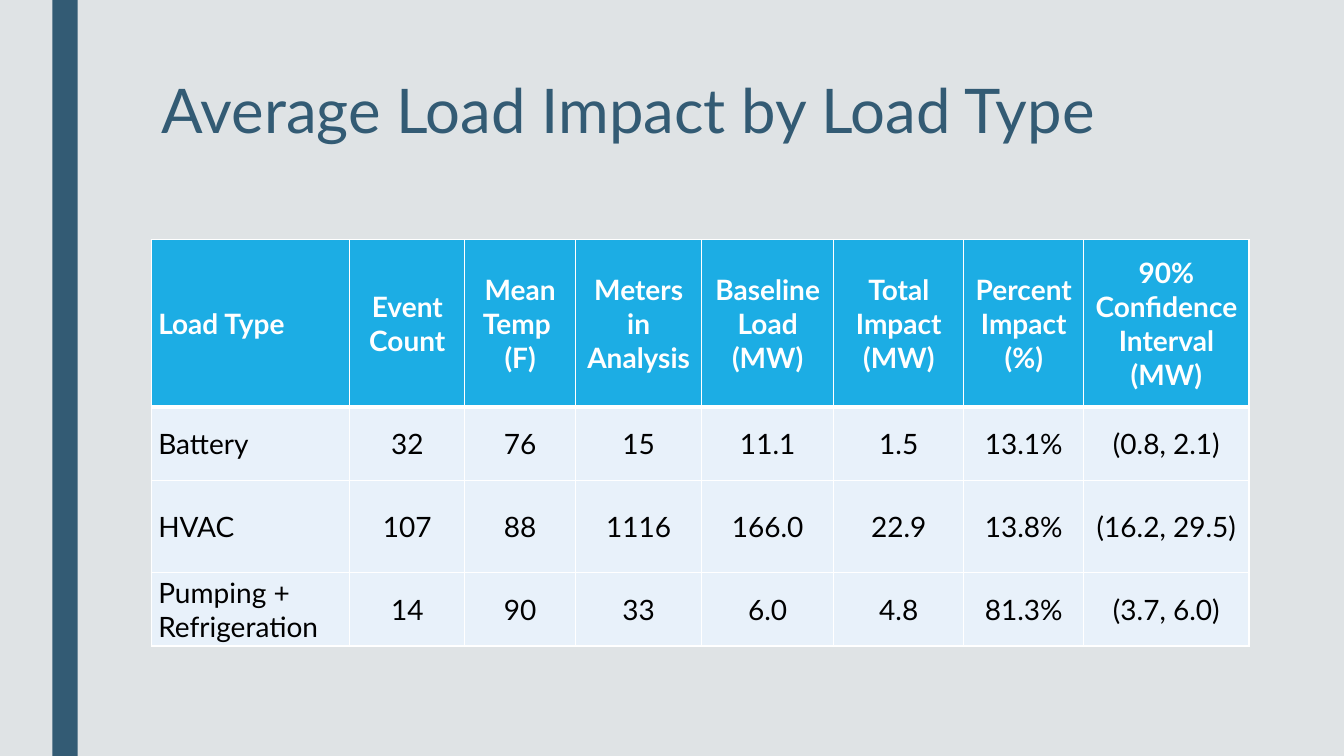
"""Build the slide that tabulates average load impact by load type."""
import dataclasses

import lxml.etree
import pptx
import pptx.dml.color
import pptx.enum.shapes
import pptx.enum.text
import pptx.oxml.ns
import pptx.util

Inches = pptx.util.Inches
Pt = pptx.util.Pt
ALIGN = pptx.enum.text.PP_ALIGN
ANCHOR = pptx.enum.text.MSO_ANCHOR


@dataclasses.dataclass(frozen=True)
class Theme:
    """Colours, font and sizes of the slide."""
    font: str = "Lato"
    background: str = "DFE3E5"
    accent: str = "335B74"
    header_fill: str = "1CADE4"
    body_fill: str = "E8F1FA"
    header_text: str = "FFFFFF"
    body_text: str = "000000"
    border: str = "FFFFFF"
    title_size: int = 44
    table_size: int = 20
    thin: int = 1
    thick: int = 3


COLUMN_WIDTHS = [1.97, 1.14, 1.1, 1.25, 1.31, 1.29, 1.19, 1.64]
ROW_HEIGHTS = [1.66, 0.73, 0.91, 0.73]
ROWS = [
    ["Load Type", "Event Count", "Mean Temp \n(F)", "Meters in Analysis", "Baseline Load (MW)",
     "Total Impact (MW)", "Percent Impact (%)", "90% Confidence Interval (MW)"],
    ["Battery", "32", "76", "15", "11.1", "1.5", "13.1%", "(0.8, 2.1)"],
    ["HVAC", "107", "88", "1116", "166.0", "22.9", "13.8%", "(16.2, 29.5)"],
    ["Pumping + Refrigeration", "14", "90", "33", "6.0", "4.8", "81.3%", "(3.7, 6.0)"],
]


def rgb(color):
    """Turn a hex string into a colour."""
    return pptx.dml.color.RGBColor.from_string(color)


def write_text(text_frame, text, *, font, size, color, bold=False, align=ALIGN.LEFT, spacing=1.0):
    """Fill a text frame, one paragraph per line of text."""
    text_frame.word_wrap = True
    text_frame.text = text
    for paragraph in text_frame.paragraphs:
        paragraph.alignment = align
        paragraph.line_spacing = spacing
        for run in paragraph.runs:
            run.font.name = font
            run.font.size = Pt(size)
            run.font.bold = bold
            run.font.color.rgb = rgb(color)


def add_border(cell, side, color, width):
    """Draw one side (L, R, T or B) of a cell's border."""
    qn = pptx.oxml.ns.qn
    properties = cell._tc.get_or_add_tcPr()
    line = lxml.etree.SubElement(properties, qn(f"a:ln{side}"), w=str(Pt(width)))
    fill = lxml.etree.SubElement(line, qn("a:solidFill"))
    lxml.etree.SubElement(fill, qn("a:srgbClr"), val=color)


class SlideBuilder:
    """Hold the theme and the current slide, and add elements to it."""

    def __init__(self, presentation, theme):
        """Add a title-only slide with the theme's background."""
        self.theme = theme
        self.slide = presentation.slides.add_slide(presentation.slide_layouts[5])
        self.slide.background.fill.solid()
        self.slide.background.fill.fore_color.rgb = rgb(theme.background)

    def bar(self, left, top, width, height):
        """Add a plain accent rectangle."""
        shape = self.slide.shapes.add_shape(
            pptx.enum.shapes.MSO_SHAPE.RECTANGLE,
            Inches(left), Inches(top), Inches(width), Inches(height))
        shape.shadow.inherit = False
        shape.fill.solid()
        shape.fill.fore_color.rgb = rgb(self.theme.accent)
        shape.line.fill.background()

    def title(self, text, left, top, width, height):
        """Place and format the title placeholder."""
        title = self.slide.shapes.title
        title.left, title.top = Inches(left), Inches(top)
        title.width, title.height = Inches(width), Inches(height)
        title.text_frame.vertical_anchor = ANCHOR.TOP
        write_text(title.text_frame, text, font=self.theme.font, size=self.theme.title_size,
                   color=self.theme.accent, spacing=0.89)

    def table(self, rows, left, top, column_widths, row_heights):
        """Add a table whose first row is the header."""
        table = self.slide.shapes.add_table(
            len(rows), len(column_widths), Inches(left), Inches(top),
            Inches(sum(column_widths)), Inches(sum(row_heights))).table
        table.horz_banding = False
        for column, width in zip(table.columns, column_widths):
            column.width = Inches(width)
        for row, height in zip(table.rows, row_heights):
            row.height = Inches(height)
        for row_index, row in enumerate(rows):
            for column_index, text in enumerate(row):
                self.cell(table.cell(row_index, column_index), text, row_index, column_index)

    def cell(self, cell, text, row_index, column_index):
        """Format one table cell according to its row and column."""
        theme = self.theme
        header = row_index == 0
        cell.margin_left = cell.margin_right = Inches(0.07)
        cell.margin_top = cell.margin_bottom = 0
        cell.vertical_anchor = ANCHOR.MIDDLE
        widths = {"L": theme.thin, "R": theme.thin,
                  "T": theme.thick if row_index == 1 else theme.thin,
                  "B": theme.thick if header else theme.thin}
        for side, width in widths.items():
            add_border(cell, side, theme.border, width)
        cell.fill.solid()
        cell.fill.fore_color.rgb = rgb(theme.header_fill if header else theme.body_fill)
        write_text(cell.text_frame, text, font=theme.font, size=theme.table_size, bold=header,
                   color=theme.header_text if header else theme.body_text,
                   align=ALIGN.CENTER if column_index else ALIGN.LEFT)


def main():
    """Build and save the presentation."""
    presentation = pptx.Presentation()
    presentation.slide_width = Inches(13.33)
    presentation.slide_height = Inches(7.5)
    builder = SlideBuilder(presentation, Theme())
    builder.bar(0.52, 0, 0.25, 7.5)
    builder.title("Average Load Impact by Load Type", 1.5, 0.75, 10.5, 1.62)
    builder.table(ROWS, 1.5, 2.38, COLUMN_WIDTHS, ROW_HEIGHTS)
    presentation.save("out.pptx")


if __name__ == "__main__":
    main()
